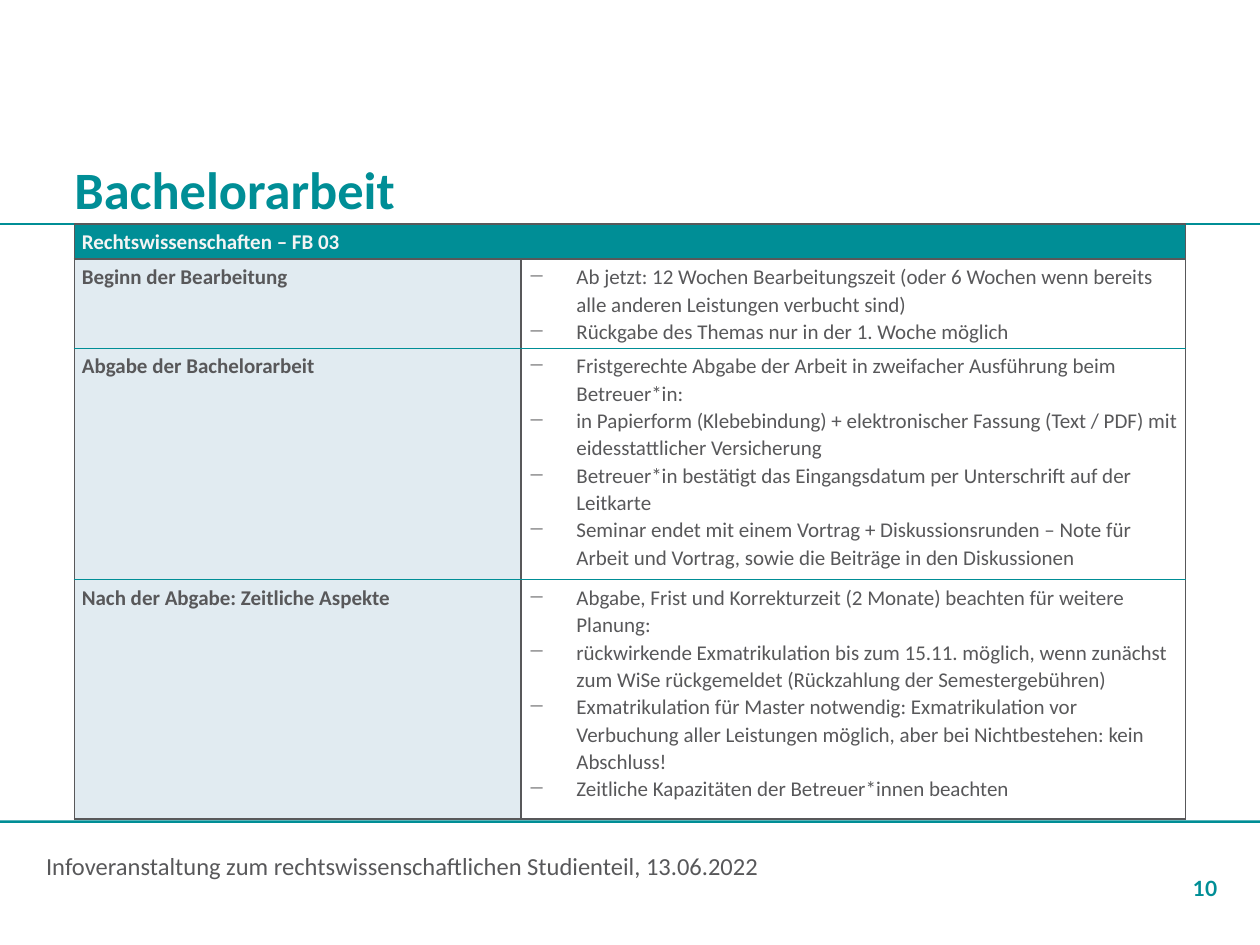
from lxml.etree import SubElement as Sub
from pptx import Presentation
from pptx.dml.color import RGBColor
from pptx.enum.shapes import MSO_CONNECTOR as Conn, MSO_SHAPE as Geo
from pptx.enum.text import MSO_ANCHOR as Anchor, PP_ALIGN as Align
from pptx.oxml.ns import qn
from pptx.util import Cm, Pt

TEAL, GREY, PALE, LIGHT = "008E96", "58585A", "E1EBF1", "F4F4F4"
WIDE, HIGH = 25.4, 19.05
HEAD = "Rechtswissenschaften – FB 03"
ROWS = [
    ("Beginn der Bearbeitung", 1.68, [
        "Ab jetzt: 12 Wochen Bearbeitungszeit (oder 6 Wochen wenn bereits alle anderen Leistungen verbucht sind)",
        "Rückgabe des Themas nur in der 1. Woche möglich"]),
    ("Abgabe der Bachelorarbeit", 4.67, [
        "Fristgerechte Abgabe der Arbeit in zweifacher Ausführung beim Betreuer*in:",
        "in Papierform (Klebebindung) + elektronischer Fassung (Text / PDF) mit eidesstattlicher Versicherung",
        "Betreuer*in bestätigt das Eingangsdatum per Unterschrift auf der Leitkarte",
        "Seminar endet mit einem Vortrag + Diskussionsrunden – Note für Arbeit und Vortrag, "
        "sowie die Beiträge in den Diskussionen"]),
    ("Nach der Abgabe: Zeitliche Aspekte", 4.83, [
        "Abgabe, Frist und Korrekturzeit (2 Monate) beachten für weitere Planung:",
        "rückwirkende Exmatrikulation bis zum 15.11. möglich, wenn zunächst zum WiSe rückgemeldet "
        "(Rückzahlung der Semestergebühren)",
        "Exmatrikulation für Master notwendig: Exmatrikulation vor Verbuchung aller Leistungen möglich, "
        "aber bei Nichtbestehen: kein Abschluss!",
        "Zeitliche Kapazitäten der Betreuer*innen beachten"]),
]


def rgb(code):
    """Turn a hex string into a colour."""
    return RGBColor.from_string(code)


def style(para, size, code, bold=False, face="Calibri"):
    """Set the font of a paragraph."""
    font = para.font
    font.size, font.bold, font.name = Pt(size), bold, face
    font.color.rgb = rgb(code)


def label(slide, box, text, anchor, inset=0):
    """Place a wrapping text box and return its paragraph."""
    frame = slide.shapes.add_textbox(*map(Cm, box)).text_frame
    frame.word_wrap, frame.vertical_anchor = True, anchor
    frame.margin_left = frame.margin_right = Cm(inset)
    frame.margin_top = frame.margin_bottom = Cm(inset / 2)
    frame.text = text
    return frame.paragraphs[0]


def title(slide, left, top, width, height):
    """Draw the heading and the full-width rule below it."""
    para = label(slide, (left, top, width, height), "Bachelorarbeit", Anchor.MIDDLE)
    style(para, 30, TEAL, True)
    low = Cm(top + height)
    rule = slide.shapes.add_connector(Conn.STRAIGHT, 0, low, Cm(WIDE), low)
    rule.line.color.rgb, rule.line.width = rgb(TEAL), Pt(1)
    Sub(rule._element.spPr, qn("a:effectLst"))


def footer(slide, top):
    """Draw the bar, the event line and the page number."""
    bar = slide.shapes.add_shape(Geo.RECTANGLE, 0, Cm(top), Cm(WIDE), Cm(0.05))
    bar.shadow.inherit = False
    bar.fill.solid()
    bar.fill.fore_color.rgb = rgb(TEAL)
    bar.line.fill.background()
    event = "Infoveranstaltung zum rechtswissenschaftlichen Studienteil, 13.06.2022"
    style(label(slide, (0.68, top + 0.5, 16.03, 0.86), event, Anchor.TOP, 0.25), 14, GREY)
    para = label(slide, (23.14, top + 0.61, 1.4, 1), "10", Anchor.BOTTOM)
    para.alignment = Align.RIGHT
    style(para, 12, TEAL, True, "Lato")


def edge(cell, above, below):
    """Give a cell grey sides and the named lines above and below."""
    props = cell._tc.get_or_add_tcPr()
    for side, code in zip("LRTB", (GREY, GREY, above, below)):
        width = Pt(1) if code == GREY else Pt(0.5)
        line = Sub(props, qn(f"a:ln{side}"), w=str(width))
        Sub(Sub(line, qn("a:solidFill")), qn("a:srgbClr"), val=code)


def fill(cell, lines, code, ink, bold, dash=False):
    """Write the paragraphs of a cell and colour it."""
    cell.margin_left = cell.margin_right = Cm(0.15)
    cell.margin_top = cell.margin_bottom = Cm(0.08)
    if code:
        cell.fill.solid()
        cell.fill.fore_color.rgb = rgb(code)
    else:
        cell.fill.background()
    cell.text = "\n".join(lines)
    for para in cell.text_frame.paragraphs:
        para.line_spacing, para.space_after = 1.07, Pt(0 if dash else 8)
        if dash:
            props = para._p.get_or_add_pPr()
            props.set("marL", str(Cm(0.97)))
            props.set("indent", str(-Cm(0.97)))
            Sub(props, qn("a:buChar"), char="−")
        style(para, 12, ink, bold)


def grid(slide, left, top, width):
    """Draw the table of rules for the thesis."""
    heights = [0.64] + [row[1] for row in ROWS]
    box = map(Cm, (left, top, width, sum(heights)))
    table = slide.shapes.add_table(len(heights), 2, *box).table
    table.horz_banding = table.first_row = False
    for col, share in zip(table.columns, (9, width - 9)):
        col.width = Cm(share)
    for row, height in zip(table.rows, heights):
        row.height = Cm(height)
    table.cell(0, 0).merge(table.cell(0, 1))
    last = len(ROWS)
    for num in range(last + 1):
        for cell in table.rows[num].cells:
            edge(cell, GREY if num < 2 else TEAL, GREY if num in (0, last) else TEAL)
    fill(table.cell(0, 0), [HEAD], TEAL, LIGHT, True)
    for num, (name, _, notes) in enumerate(ROWS, 1):
        fill(table.cell(num, 0), [name], PALE, GREY, True)
        fill(table.cell(num, 1), notes, None, GREY, False, True)


def main():
    """Build and save the slide."""
    deck = Presentation()
    deck.slide_width, deck.slide_height = Cm(WIDE), Cm(HIGH)
    slide = deck.slides.add_slide(deck.slide_layouts[6])
    footer(slide, 16.54)
    title(slide, 1.5, 3.07, 22.4, 1.45)
    grid(slide, 1.5, 4.52, 22.4)
    deck.save("out.pptx")


if __name__ == "__main__":
    main()
